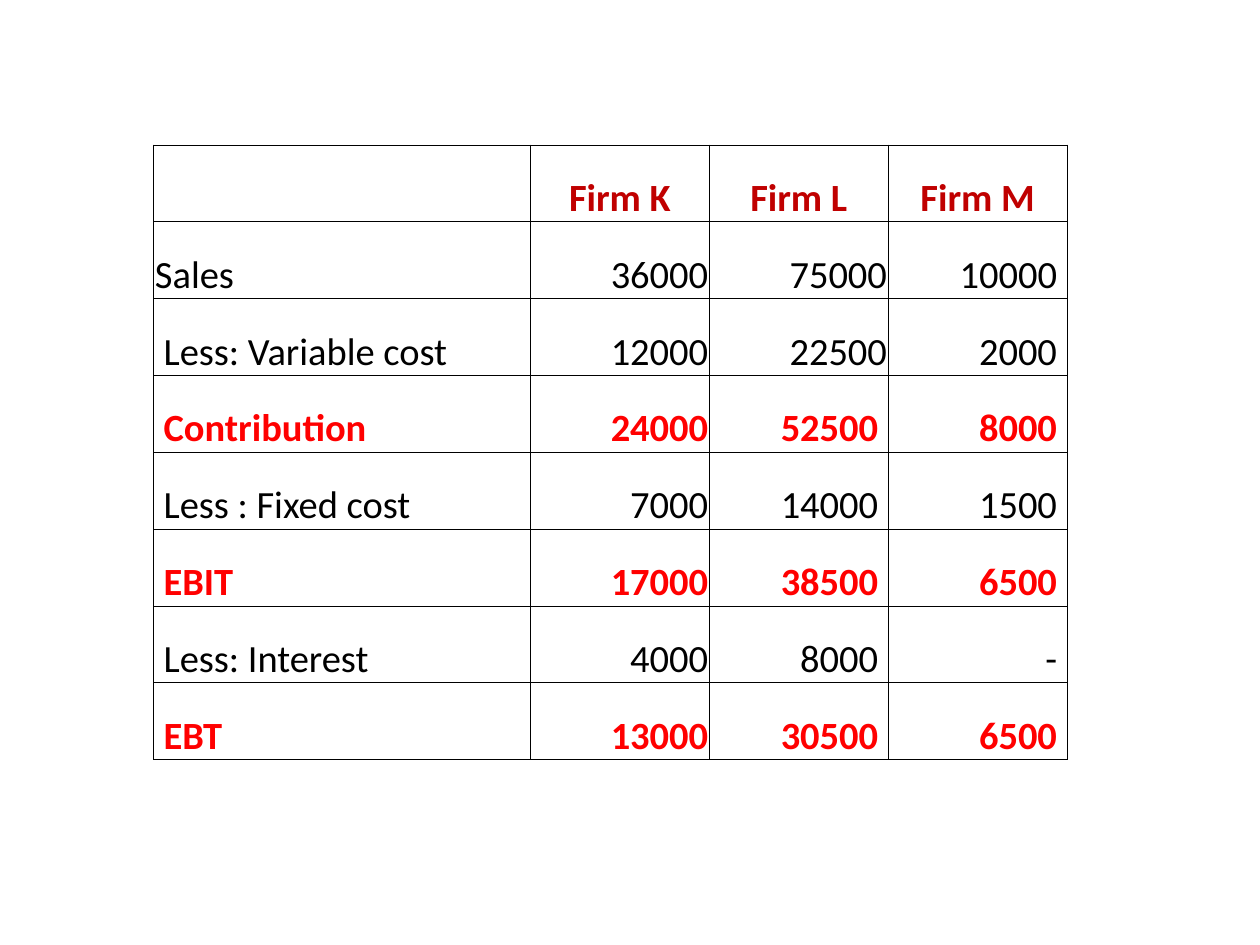
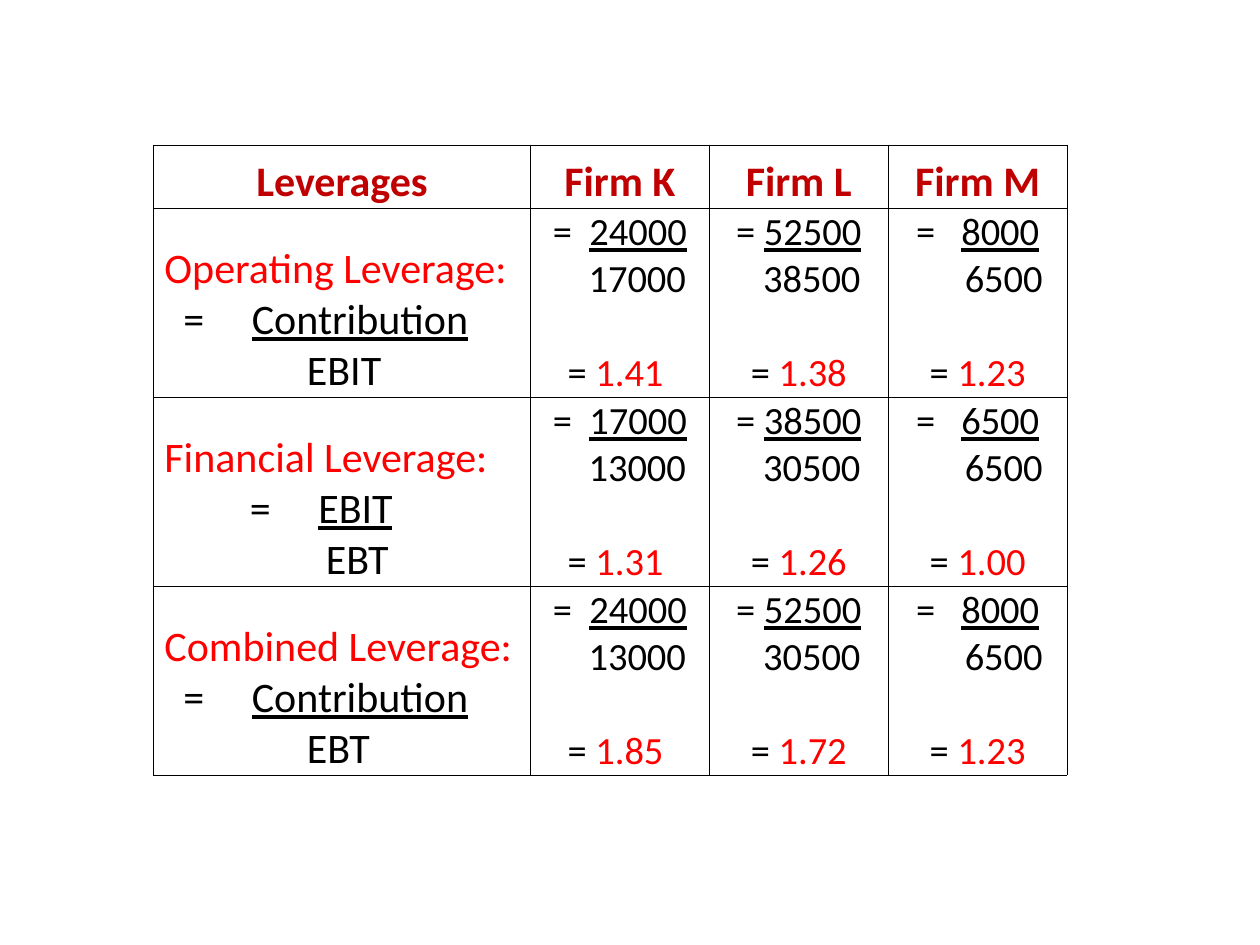
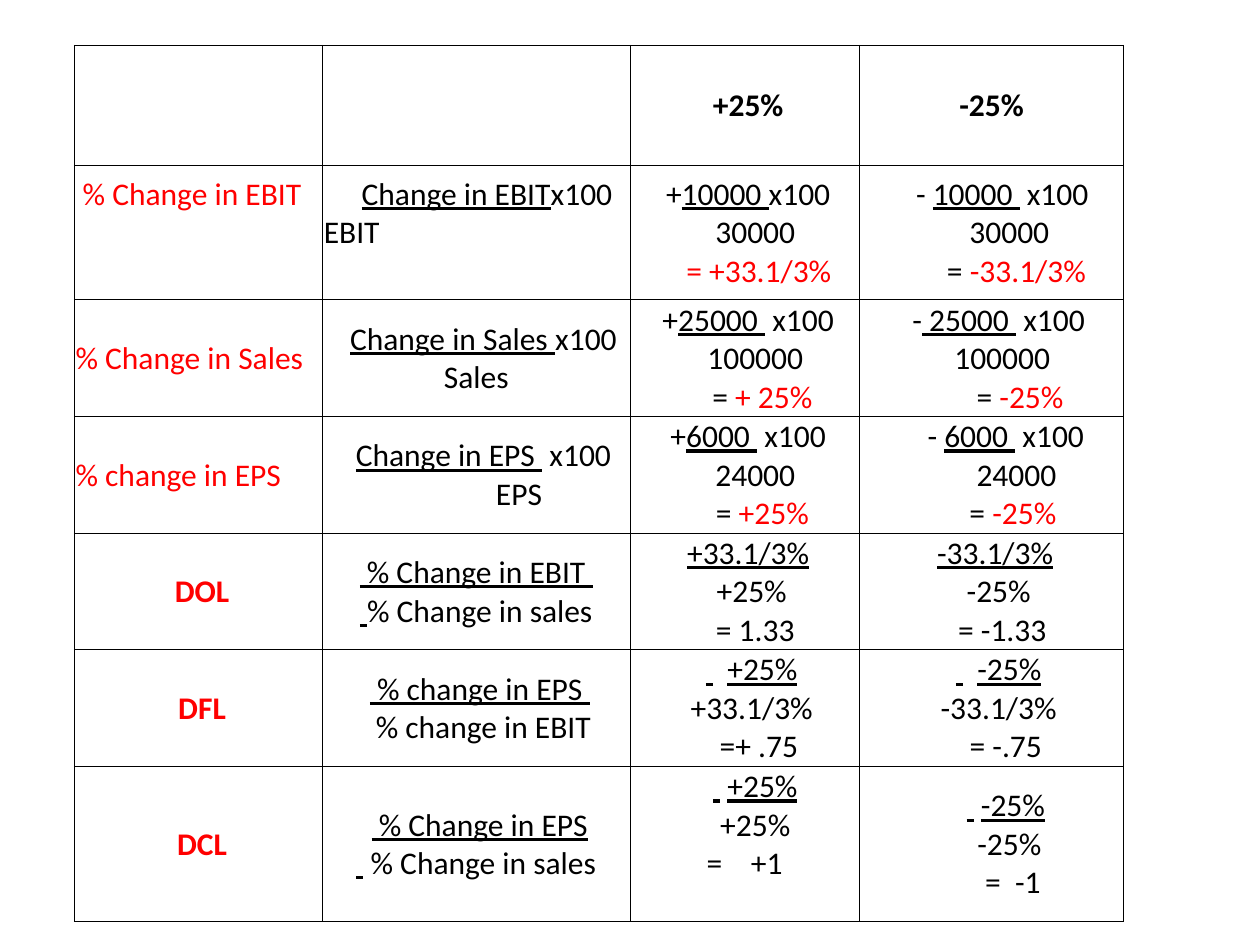
from itertools import groupby

from lxml import etree
from pptx import Presentation
from pptx.dml.color import RGBColor
from pptx.enum.text import MSO_ANCHOR, PP_ALIGN as AL
from pptx.oxml.ns import qn
from pptx.util import Emu, Inches, Pt

BLACK, RED, DARK_RED = "000000", "FF0000", "C00000"
FONT = "Calibri"
GRID = Inches(0.1)  # the slide is 100 columns by 75 rows
SPACE = 0.226  # width of a space, in ems
LINE = 1.22  # height of a text line, in ems


def rgb(value):
    return RGBColor.from_string(value)


def cells(count):
    """Turn a number of grid steps into a length."""
    return Emu(round(count * GRID))


def styled_chars(text):
    """Yield (character, underlined, red): _ toggles underline, ~ toggles red."""
    under = red = False
    for char in text:
        if char == "_":
            under = not under
        elif char == "~":
            red = not red
        else:
            yield char, under, red


class Deck:
    """Holds the style and the current slide.

    In a line of text, leading · marks set the indent in space widths;
    further on, a group of them is one stretched space of that many widths.
    """

    def __init__(self):
        self.prs = Presentation()
        self.prs.slide_width, self.prs.slide_height = cells(100), cells(75)
        self.s = None

    def new_slide(self):
        self.s = self.prs.slides.add_slide(self.prs.slide_layouts[6])

    def table(self, left, top, widths, heights):
        frame = self.s.shapes.add_table(
            len(heights), len(widths), cells(left), cells(top),
            cells(sum(widths)), cells(sum(heights)))
        tbl = frame.table
        tbl.first_row = tbl.horz_banding = False
        for col, width in zip(tbl.columns, widths):
            col.width = cells(width)
        for row, height in zip(tbl.rows, heights):
            row.height = cells(height)
        for cell in tbl.iter_cells():
            cell.margin_left = cell.margin_right = cell.margin_top = cells(0.1)
            cell.margin_bottom = 0
            self.border(cell)
            cell.fill.background()
        return tbl

    def border(self, cell):
        tc_pr = cell._tc.get_or_add_tcPr()
        for side in ("a:lnL", "a:lnR", "a:lnT", "a:lnB"):
            ln = etree.SubElement(tc_pr, qn(side), w=str(Pt(0.5)))
            fill = etree.SubElement(ln, qn("a:solidFill"))
            etree.SubElement(fill, qn("a:srgbClr"), val=BLACK)

    def text(self, cell, lines, size, color=BLACK, bold=False, align=AL.CENTER,
             anchor=MSO_ANCHOR.BOTTOM):
        cell.vertical_anchor = anchor
        tf = cell.text_frame
        for i, line in enumerate(lines):
            p = tf.add_paragraph() if i else tf.paragraphs[0]
            p.alignment = align
            self.line(p, line, size, color, bold)

    def line(self, p, line, size, color, bold):
        body = line.lstrip("·")
        indent = (len(line) - len(body)) * SPACE * size
        if indent:
            p._p.get_or_add_pPr().set("marL", str(Pt(indent)))
        runs = groupby(styled_chars(body), lambda c: (c[0] == "·", c[1], c[2]))
        for (gap, under, red), chars in runs:
            chars = [c[0] for c in chars]
            r = p.add_run()
            r.text = " " if gap else "".join(chars)
            f = r.font
            f.name, f.size, f.bold, f.underline = FONT, Pt(size), bold, under
            f.color.rgb = rgb(RED if red else color)
            if gap and len(chars) > 1:
                stretch = (len(chars) - 1) * SPACE * size
                r._r.get_or_add_rPr().set("spc", str(round(stretch * 100)))


FIRM_WIDTHS = [29.9, 14.2, 14.2, 14.2]
FIRMS = ["Firm K", "Firm L", "Firm M"]


def income_slide(deck):
    rows = [
        ("Sales", "36000", "75000", "10000"),
        ("·Less: Variable cost", "12000", "22500", "2000"),
        ("·Contribution", "24000", "52500", "8000"),
        ("·Less : Fixed cost", "7000", "14000", "1500"),
        ("·EBIT", "17000", "38500", "6500"),
        ("·Less: Interest", "4000", "8000", "-"),
        ("·EBT", "13000", "30500", "6500"),
    ]
    totals = ("·Contribution", "·EBIT", "·EBT")
    size = 22
    deck.new_slide()
    tbl = deck.table(12.2, 11.5, FIRM_WIDTHS, [6.1] * 8)
    for c, firm in enumerate(FIRMS, 1):
        deck.text(tbl.cell(0, c), [firm], size, DARK_RED, True)
    for r, row in enumerate(rows, 1):
        total = row[0] in totals
        for c, value in enumerate(row):
            cell = tbl.cell(r, c)
            deck.text(cell, [value], size, RED if total else BLACK, total,
                      AL.RIGHT if c else AL.LEFT)
            if c == 3 or (c == 2 and r > 2):
                cell.margin_right = cells(0.8)


def leverage_slide(deck):
    rows = [
        (["·~Operating Leverage:~", "···=·····_Contribution_", "·" * 16 + "EBIT"],
         ("24000", "17000", "1.41"), ("52500", "38500", "1.38"),
         ("8000", "6500", "1.23")),
        (["·~Financial Leverage:~", "··········=·····_EBIT_", "·" * 18 + "EBT"],
         ("17000", "13000", "1.31"), ("38500", "30500", "1.26"),
         ("6500", "6500", "1.00")),
        (["·~Combined Leverage:~", "···=·····_Contribution_", "·" * 16 + "EBT"],
         ("24000", "13000", "1.85"), ("52500", "30500", "1.72"),
         ("8000", "6500", "1.23")),
    ]
    gaps = [(2, 4), (1, 3), (3, 6)]  # after the equals sign, before the divisor
    size = 22
    deck.new_slide()
    tbl = deck.table(12.2, 11.5, FIRM_WIDTHS, [5, 15, 15, 15])
    for c, head in enumerate(["Leverages"] + FIRMS):
        deck.text(tbl.cell(0, c), [head], 24, DARK_RED, True)
    for r, (formula, *ratios) in enumerate(rows, 1):
        deck.text(tbl.cell(r, 0), formula, 24, align=AL.LEFT)
        for c, ((top, bottom, result), (gap, indent)) in enumerate(zip(ratios, gaps), 1):
            cell = tbl.cell(r, c)
            tail = " " if c == 1 else ""
            deck.text(cell, ["=" + "·" * gap + f"_{top}_", "·" * indent + bottom,
                             f"= ~{result}{tail}~"], size)
            cell.text_frame.paragraphs[-1].space_before = Pt(size * LINE)


def change_slide(deck):
    rows = [
        (["·% Change in EBIT"], ["···_Change in EBIT_x100", "EBIT"],
         ["·+_10000 _x100", "···30000", "····~= +33.1/3%~"],
         ["···- _10000 _ x100", "·····30000", "·······= ~-33.1/3%~"]),
        (["% Change in Sales"], ["··_Change in Sales _x100", "Sales"],
         ["·+_25000··_x100", "···100000", "·····= ~+ 25%~"],
         ["··-_ 25000··_x100", "···100000", "········= ~-25%~"]),
        (["% change in EPS"], ["··_Change in EPS··_x100", "·" * 12 + "EPS"],
         ["·+_6000··_x100", "···24000", "·····= ~+25%~"],
         ["····- _6000··_x100", "·······24000", "······= ~-25%~"]),
        (["·DOL"], ["_ % Change in EBIT··_", "_ _% Change in sales"],
         ["·_+33.1/3%_", "··+25%", "···= 1.33"],
         ["·_-33.1/3%_", "··-25%", "···= -1.33"]),
        (["·DFL"], ["·_ % change in EPS _", "··% change in EBIT"],
         ["··_···+25%_", "··+33.1/3%", "····=+ .75"],
         ["··_···-25%_", "··-33.1/3%", "····= -.75"]),
        (["·DCL"], ["·_ % Change in EPS_", "_··_% Change in sales"],
         ["···_··+25%_", "···+25%", "=····+1"],
         ["····_··-25%_", "·····-25%", "······=··-1"]),
    ]
    size = 18
    middle = MSO_ANCHOR.MIDDLE
    deck.new_slide()
    tbl = deck.table(5.9, 3.6, [19.7, 24.4, 18.2, 21],
                     [9.5, 10.7, 9.2, 9.2, 9.2, 9.2, 12.2])
    for c, head in ((2, "·+25%"), (3, "-25%")):
        deck.text(tbl.cell(0, c), [head], size, bold=True, anchor=middle)
    for r, (label, *formulas) in enumerate(rows, 1):
        degree = r > 3
        deck.text(tbl.cell(r, 0), label, size, RED, degree,
                  AL.CENTER if degree else AL.LEFT, middle)
        for c, lines in enumerate(formulas, 1):
            deck.text(tbl.cell(r, c), lines, size, anchor=middle)
    tbl.cell(1, 1).text_frame.paragraphs[1].alignment = AL.LEFT
    # Cells raised by whole text lines above the middle of their row
    for r, c, count in ((1, 0, 2), (1, 1, 1), (6, 2, 1)):
        tbl.cell(r, c).margin_bottom = Pt(count * size * LINE)


def main():
    deck = Deck()
    income_slide(deck)
    leverage_slide(deck)
    change_slide(deck)
    deck.prs.save("out.pptx")


if __name__ == "__main__":
    main()
